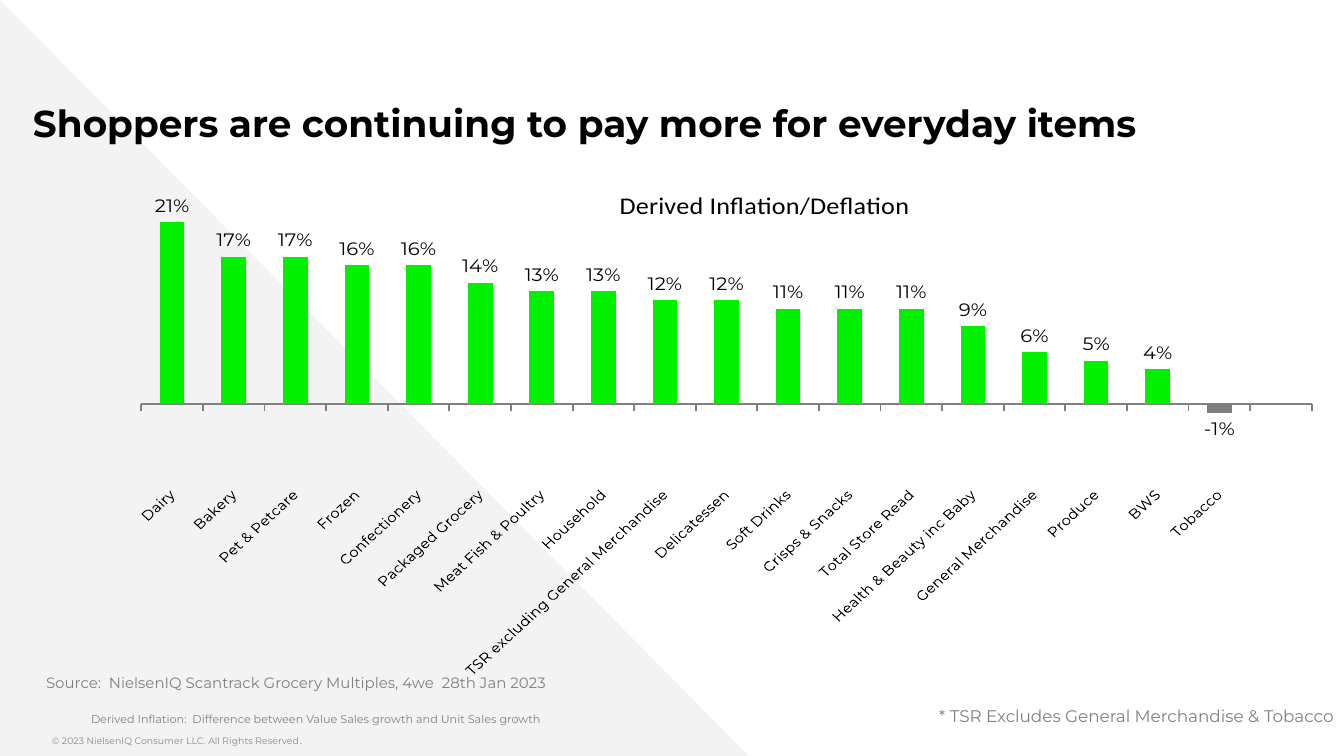
from lxml.etree import SubElement
from pptx import Presentation
from pptx.chart.data import CategoryChartData
from pptx.dml.color import RGBColor
from pptx.enum.chart import XL_CHART_TYPE, XL_LABEL_POSITION, XL_TICK_LABEL_POSITION, XL_TICK_MARK
from pptx.enum.shapes import MSO_SHAPE
from pptx.enum.text import MSO_ANCHOR
from pptx.oxml.ns import qn
from pptx.util import Emu, Pt

PX = 914400 / 134.4
BLACK = RGBColor(0x00, 0x00, 0x00)
GREY = RGBColor(0x80, 0x80, 0x80)
COPYRIGHT_GREY = RGBColor(0x88, 0x88, 0x88)
PALE_GREY = RGBColor(0xF3, 0xF3, 0xF3)
GREEN = RGBColor(0x00, 0xF0, 0x00)

INFLATION = {
    "Dairy": 0.21, "Bakery": 0.17, "Pet & Petcare": 0.17, "Frozen": 0.16,
    "Confectionery": 0.16, "Packaged Grocery": 0.14, "Meat Fish & Poultry": 0.13,
    "Household": 0.13, "TSR excluding General Merchandise": 0.12,
    "Delicatessen": 0.12, "Soft Drinks": 0.11, "Crisps & Snacks": 0.11,
    "Total Store Read": 0.11, "Health & Beauty inc Baby": 0.09,
    "General Merchandise": 0.06, "Produce": 0.05, "BWS": 0.04, "Tobacco": -0.01,
    "": None,
}


def px(length):
    return Emu(round(length * PX))


def box_in_emu(box):
    return [px(length) for length in box]


def set_font(font, size, color=BLACK, name="Montserrat", bold=False):
    values = {"size": Pt(size), "name": name, "bold": bold}
    for attribute, value in values.items():
        setattr(font, attribute, value)
    font.color.rgb = color


def add_text_box(slide, box, margins, wrap=True, anchor=MSO_ANCHOR.TOP):
    """Add an empty text box; margins are the side and the top/bottom insets in px."""
    frame = slide.shapes.add_textbox(*box_in_emu(box)).text_frame
    side, end = (px(margin) for margin in margins)
    values = {
        "margin_left": side, "margin_right": side,
        "margin_top": end, "margin_bottom": end,
        "word_wrap": wrap, "vertical_anchor": anchor,
    }
    for attribute, value in values.items():
        setattr(frame, attribute, value)
    return frame


def add_run(paragraph, text, size, **font_values):
    run = paragraph.add_run()
    run.text = text
    set_font(run.font, size, **font_values)


def add_background(slide, box):
    triangle = slide.shapes.add_shape(MSO_SHAPE.RIGHT_TRIANGLE, *box_in_emu(box))
    triangle.shadow.inherit = False
    triangle.fill.solid()
    triangle.fill.fore_color.rgb = PALE_GREY
    triangle.line.fill.background()


def add_title(slide, box):
    frame = add_text_box(slide, box, (13, 0), anchor=MSO_ANCHOR.BOTTOM)
    paragraph = frame.paragraphs[0]
    paragraph.line_spacing = 0.8
    add_run(paragraph, "Shoppers are continuing to pay more for everyday items", 20, bold=True)


def set_layout(parent, **values):
    """Place a chart part by fractions of the chart area."""
    layout = parent.find(qn("c:layout"))
    if layout is None:
        layout = SubElement(parent, qn("c:layout"))
        follower = parent.find(qn("c:tx"))
        if follower is None:
            parent.insert(0, layout)
        else:
            follower.addnext(layout)
    manual = SubElement(layout, qn("c:manualLayout"))
    for tag, value in values.items():
        SubElement(manual, qn(f"c:{tag}")).set("val", str(value))


def style_axes(chart):
    value_axis = chart.value_axis
    values = {
        "minimum_scale": -0.08, "maximum_scale": 0.25,
        "has_major_gridlines": False, "visible": False,
    }
    for attribute, value in values.items():
        setattr(value_axis, attribute, value)

    category_axis = chart.category_axis
    category_axis.tick_label_position = XL_TICK_LABEL_POSITION.LOW
    category_axis.major_tick_mark = XL_TICK_MARK.OUTSIDE
    category_axis.format.line.color.rgb = GREY
    category_axis.format.line.width = Pt(1)
    set_font(category_axis.tick_labels.font, 8)
    body = chart.element.xpath(".//c:catAx/c:txPr/a:bodyPr")[0]
    body.set("rot", "-2700000")
    body.set("vert", "horz")


def style_bars(plot):
    plot.gap_width = 150
    plot.vary_by_categories = False
    series = plot.series[0]
    series.invert_if_negative = False
    falling = list(INFLATION).index("Tobacco")
    for bar, color in ((series, GREEN), (series.points[falling], GREY)):
        bar.format.fill.solid()
        bar.format.fill.fore_color.rgb = color
    labels = series.data_labels
    values = {
        "show_value": True, "number_format": "0%", "number_format_is_linked": False,
        "position": XL_LABEL_POSITION.OUTSIDE_END,
    }
    for attribute, value in values.items():
        setattr(labels, attribute, value)
    set_font(labels.font, 10.5)


def add_inflation_chart(slide, box):
    data = CategoryChartData(number_format="0%")
    data.categories = list(INFLATION)
    data.add_series("Derived Inflation/Deflation", list(INFLATION.values()))
    chart = slide.shapes.add_chart(
        XL_CHART_TYPE.COLUMN_CLUSTERED, *box_in_emu(box), data).chart
    chart.has_legend = False
    set_font(chart.font, 18, name="Arial")

    chart.has_title = True
    paragraph = chart.chart_title.text_frame.paragraphs[0]
    add_run(paragraph, "Derived Inflation/Deflation", 14, name="Calibri")
    title = chart.element.xpath(".//c:title")[0]
    title.find(qn("c:overlay")).set("val", "1")
    set_layout(title, xMode="edge", yMode="edge", x=0.41, y=0.02)

    set_layout(chart.element.xpath(".//c:plotArea")[0], layoutTarget="inner",
               xMode="edge", yMode="edge", x=0.027, y=0.027, w=0.947, h=0.619)
    style_axes(chart)
    style_bars(chart.plots[0])


def add_source(slide, box):
    frame = add_text_box(slide, box, (0, 13))
    lines = (
        ("Source:  NielsenIQ Scantrack Grocery Multiples, 4we  28th Jan 2023", 8, 22, 0),
        ("Derived Inflation:  Difference between Value Sales growth and Unit Sales growth",
         6, 67, 11),
    )
    for index, (text, size, indent, space_before) in enumerate(lines):
        paragraph = frame.add_paragraph() if index else frame.paragraphs[0]
        paragraph.space_before = Pt(space_before)
        paragraph._p.get_or_add_pPr().set("marL", str(px(indent)))
        add_run(paragraph, text, size, color=GREY)


def add_copyright(slide, box):
    paragraph = add_text_box(slide, box, (0, 7)).paragraphs[0]
    add_run(paragraph, "© 2023 NielsenIQ Consumer LLC. All Rights Reserved", 5,
            color=COPYRIGHT_GREY)
    add_run(paragraph, ".", 5, color=COPYRIGHT_GREY, name="Calibri")


def add_footnote(slide, box):
    paragraph = add_text_box(slide, box, (13, 7), wrap=False).paragraphs[0]
    add_run(paragraph, "* TSR Excludes General Merchandise & Tobacco", 9, color=GREY)


def main():
    presentation = Presentation()
    presentation.slide_width, presentation.slide_height = px(1344), px(756)
    slide = presentation.slides.add_slide(presentation.slide_layouts[6])
    add_background(slide, (0, 0, 751, 758))
    add_copyright(slide, (52, 730, 745, 27))
    add_inflation_chart(slide, (108, 175, 1236, 504))
    add_source(slide, (24, 661, 1292, 78))
    add_title(slide, (20, 82, 1328, 63))
    add_footnote(slide, (926, 699, 427, 34))
    presentation.save("out.pptx")


if __name__ == "__main__":
    main()
